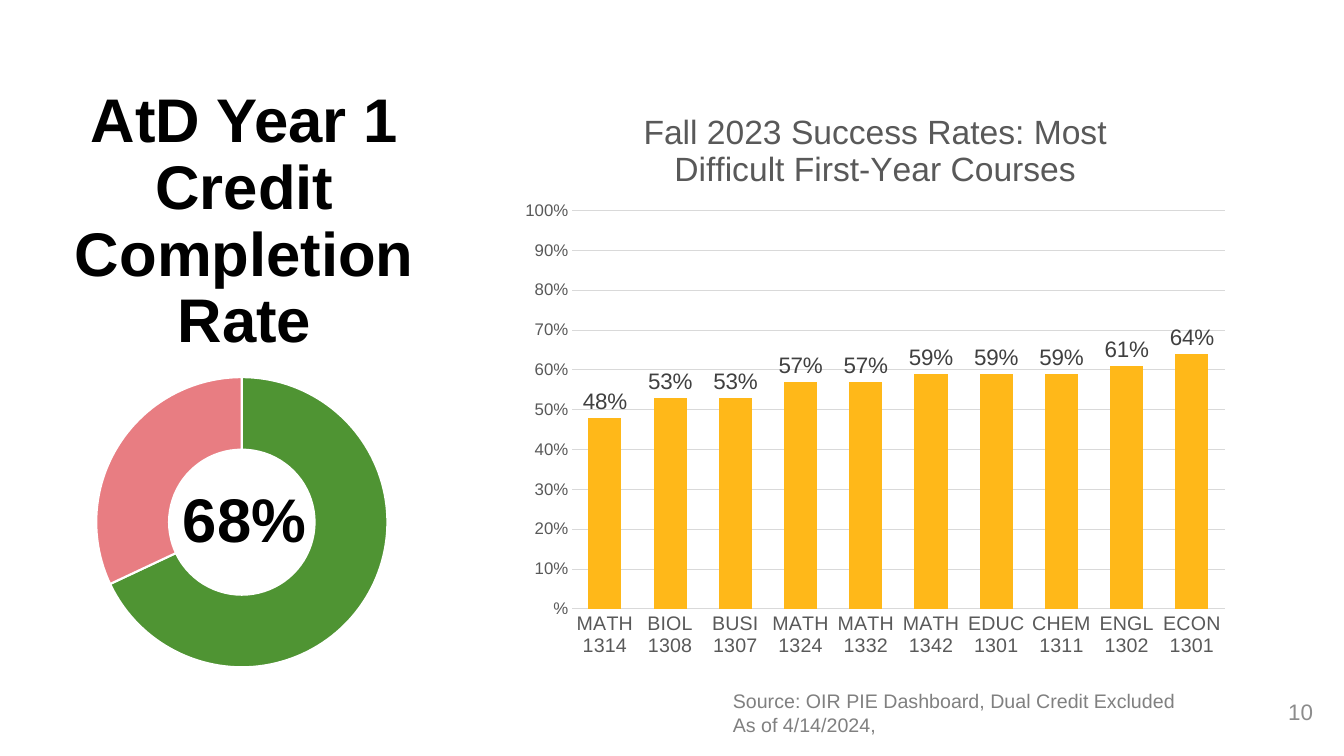
from lxml.etree import SubElement
from pptx import Presentation
from pptx.chart.data import CategoryChartData
from pptx.dml.color import RGBColor
from pptx.enum.chart import XL_CHART_TYPE, XL_LABEL_POSITION, XL_TICK_MARK
from pptx.enum.text import MSO_ANCHOR, PP_ALIGN
from pptx.oxml.ns import qn
from pptx.util import Inches, Pt

FONT = "Arial"
BLACK = RGBColor(0x00, 0x00, 0x00)
WHITE = RGBColor(0xFF, 0xFF, 0xFF)
GOLD = RGBColor(0xFF, 0xB8, 0x19)
GREEN = RGBColor(0x4F, 0x94, 0x33)
PINK = RGBColor(0xE8, 0x7D, 0x82)
GRID = RGBColor(0xD9, 0xD9, 0xD9)
AXIS_TEXT = RGBColor(0x59, 0x59, 0x59)
LABEL_TEXT = RGBColor(0x40, 0x40, 0x40)
SOURCE_TEXT = RGBColor(0x80, 0x80, 0x80)
NUMBER_TEXT = RGBColor(0x8C, 0x8C, 0x8C)

SUCCESS_RATES = [
    ("MATH 1314", 0.48), ("BIOL 1308", 0.53), ("BUSI 1307", 0.53),
    ("MATH 1324", 0.57), ("MATH 1332", 0.57), ("MATH 1342", 0.59),
    ("EDUC 1301", 0.59), ("CHEM 1311", 0.59), ("ENGL 1302", 0.61),
    ("ECON 1301", 0.64),
]
COMPLETION = [("1", 68, GREEN), ("2", 32, PINK)]


def set_font(font, size, color, bold=False):
    font.name = FONT
    font.size = Pt(size)
    font.bold = bold
    font.color.rgb = color


def add_text(slide, box, lines, size, color, bold=False,
             align=PP_ALIGN.LEFT, anchor=MSO_ANCHOR.TOP):
    """Put one paragraph per line in a text box and return the paragraphs."""
    frame = slide.shapes.add_textbox(*map(Inches, box)).text_frame
    frame.word_wrap = True
    frame.vertical_anchor = anchor
    for index, line in enumerate(lines):
        paragraph = frame.paragraphs[0] if index == 0 else frame.add_paragraph()
        paragraph.alignment = align
        run = paragraph.add_run()
        run.text = line
        set_font(run.font, size, color, bold)
    return frame.paragraphs


def place_plot(chart, x, y, w, h):
    """Fix the inner plot area, in fractions of the chart box."""
    plot_area = chart.plots[0]._element.getparent()
    layout = plot_area.find(qn("c:layout"))
    if layout is None:
        layout = SubElement(plot_area, qn("c:layout"))
        plot_area.insert(0, layout)
    manual = SubElement(layout, qn("c:manualLayout"))
    settings = [("layoutTarget", "inner"), ("xMode", "edge"), ("yMode", "edge"),
                ("x", x), ("y", y), ("w", w), ("h", h)]
    for tag, value in settings:
        SubElement(manual, qn(f"c:{tag}")).set("val", str(value))


def add_data_chart(slide, box, kind, categories, values):
    chart_data = CategoryChartData()
    chart_data.categories = categories
    chart_data.add_series("Series 1", values)
    chart = slide.shapes.add_chart(kind, *map(Inches, box), chart_data).chart
    chart.has_legend = False
    set_font(chart.font, 10, BLACK)
    return chart


def add_success_chart(slide, box):
    courses, rates = zip(*SUCCESS_RATES)
    chart = add_data_chart(slide, box, XL_CHART_TYPE.COLUMN_CLUSTERED, courses, rates)
    place_plot(chart, 0.084, 0.213, 0.896, 0.685)

    chart.has_title = True
    title = chart.chart_title.text_frame.paragraphs[0].add_run()
    title.text = "Fall 2023 Success Rates: Most Difficult First-Year Courses"
    set_font(title.font, 24, AXIS_TEXT)

    course_axis, rate_axis = chart.category_axis, chart.value_axis
    for axis, size in ((course_axis, 14), (rate_axis, 12)):
        axis.major_tick_mark = axis.minor_tick_mark = XL_TICK_MARK.NONE
        set_font(axis.tick_labels.font, size, AXIS_TEXT)
    rate_axis.minimum_scale, rate_axis.maximum_scale = 0, 1
    rate_axis.major_unit = 0.1
    rate_axis.tick_labels.number_format = "#%"
    rate_axis.tick_labels.number_format_is_linked = False
    rate_axis.format.line.fill.background()
    for line in (course_axis.format.line, rate_axis.major_gridlines.format.line):
        line.color.rgb = GRID
        line.width = Pt(0.75)

    columns = chart.plots[0]
    columns.gap_width = 97
    columns.overlap = -27
    columns.vary_by_categories = False
    fill = columns.series[0].format.fill
    fill.solid()
    fill.fore_color.rgb = GOLD
    columns.has_data_labels = True
    labels = columns.data_labels
    labels.show_value = True
    labels.position = XL_LABEL_POSITION.OUTSIDE_END
    labels.number_format = "0%"
    labels.number_format_is_linked = False
    set_font(labels.font, 16, LABEL_TEXT)


def add_completion_ring(slide, box):
    names, shares, colors = zip(*COMPLETION)
    chart = add_data_chart(slide, box, XL_CHART_TYPE.DOUGHNUT, names, shares)
    chart.has_title = False
    place_plot(chart, 0.177, 0.05, 0.735, 0.95)
    ring = chart.plots[0]
    ring.has_data_labels = False
    ring._element.find(qn("c:holeSize")).set("val", "63")
    for index, color in enumerate(colors):
        segment = ring.series[0].points[index].format
        segment.fill.solid()
        segment.fill.fore_color.rgb = color
        segment.line.color.rgb = WHITE
        segment.line.width = Pt(1.5)


def add_completion_heading(slide, box):
    heading, rate = add_text(
        slide, box, ["AtD Year 1 Credit Completion Rate", "68%"], 44, BLACK,
        bold=True, align=PP_ALIGN.CENTER, anchor=MSO_ANCHOR.MIDDLE)
    heading.line_spacing = rate.line_spacing = 0.9
    rate.space_before = Pt(95)


def add_footer(slide, box):
    left, top, width, height = box
    number_width = 0.62
    add_text(slide, (left, top, 5.2, 0.57),
             ["Source: OIR PIE Dashboard, Dual Credit Excluded", "As of 4/14/2024,"],
             14, SOURCE_TEXT)
    add_text(slide, (left + width - number_width, top, number_width, height),
             ["10"], 16, NUMBER_TEXT, align=PP_ALIGN.RIGHT, anchor=MSO_ANCHOR.BOTTOM)


def main():
    deck = Presentation()
    deck.slide_width, deck.slide_height = Inches(13.33), Inches(7.5)
    slide = deck.slides.add_slide(deck.slide_layouts[6])
    add_success_chart(slide, (5.07, 0.86, 7.22, 5.77))
    add_completion_ring(slide, (0.09, 3.59, 4.24, 3.04))
    add_completion_heading(slide, (0.42, 0, 4.01, 6.4))
    add_footer(slide, (7.17, 6.79, 5.95, 0.45))
    deck.save("out.pptx")


if __name__ == "__main__":
    main()
